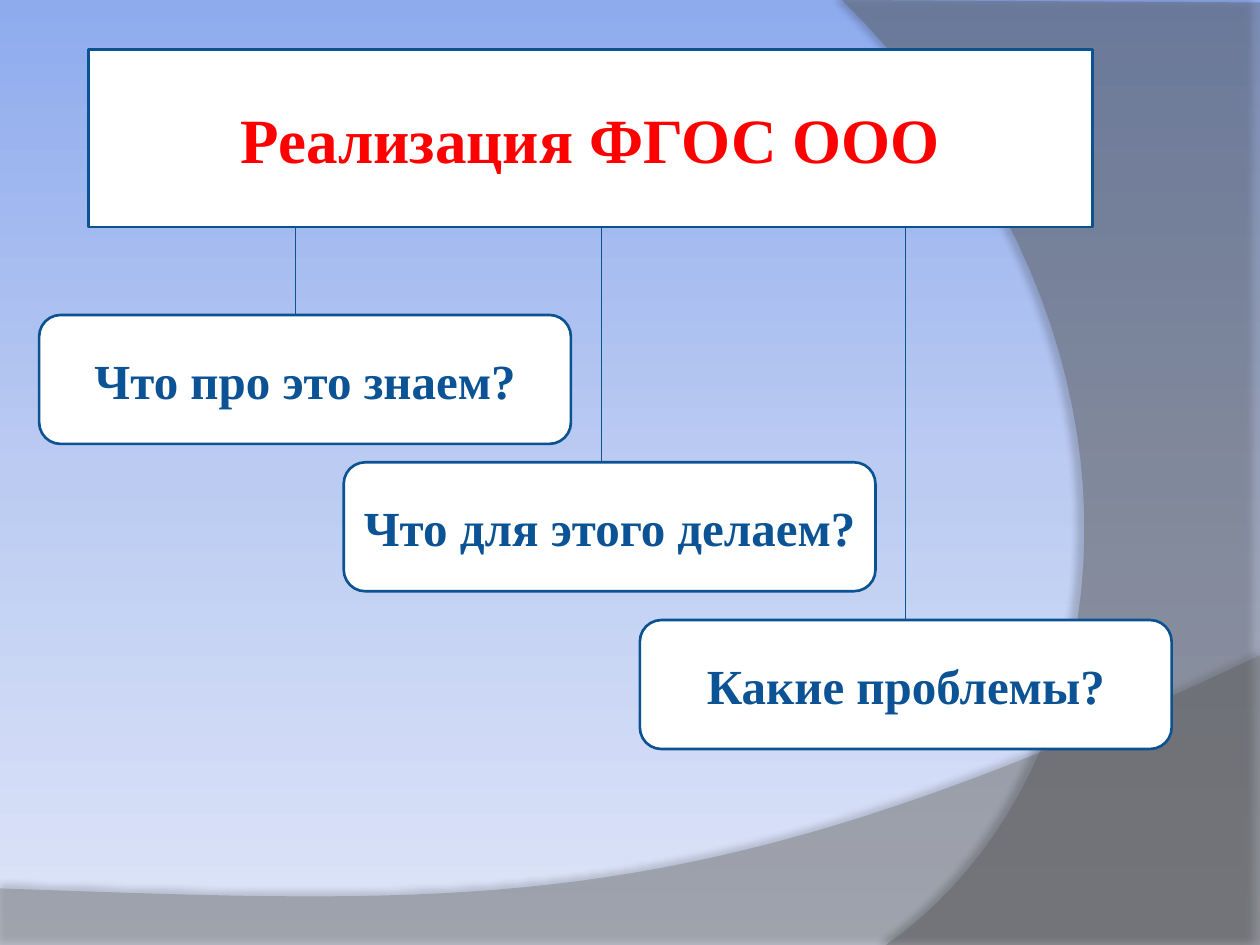
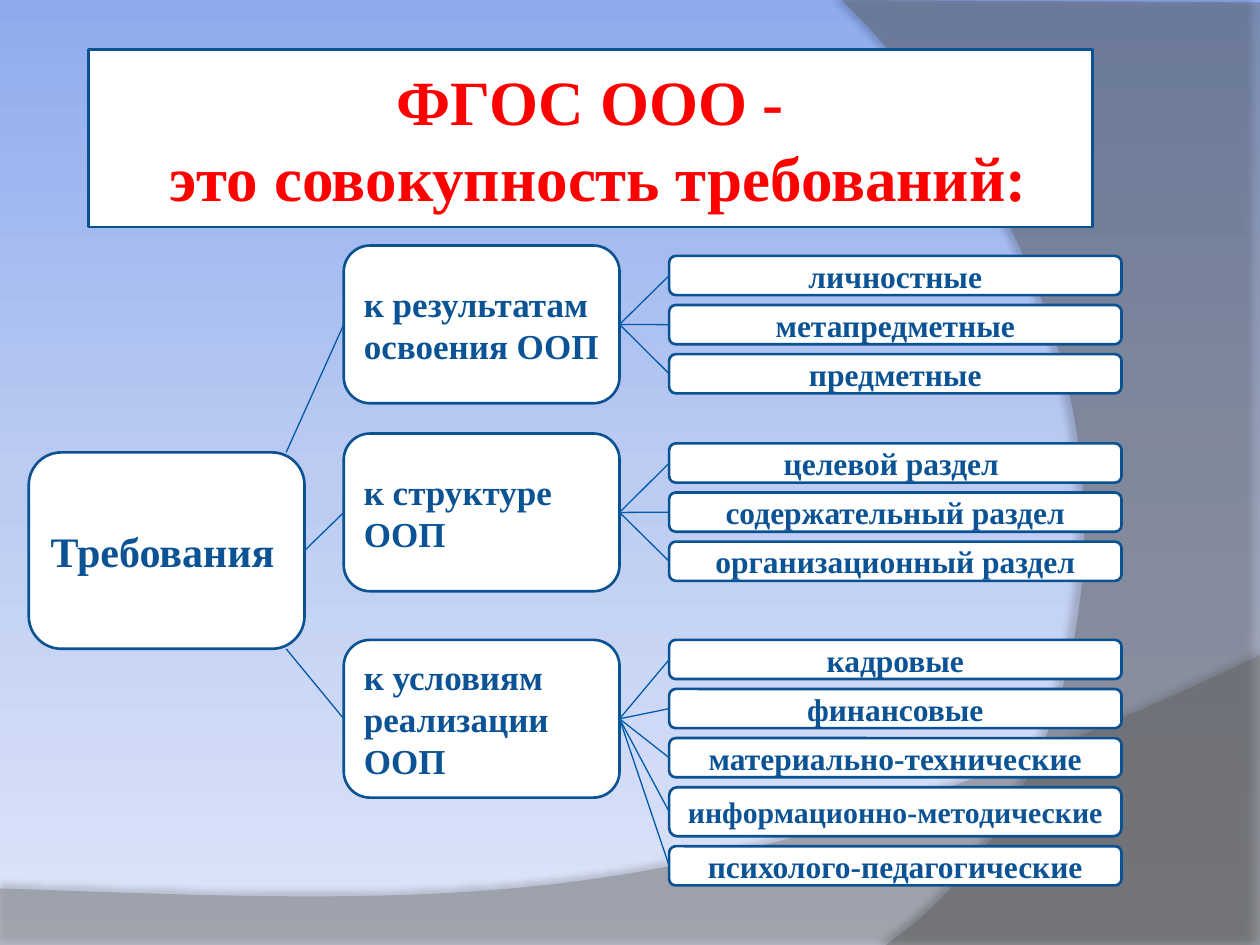
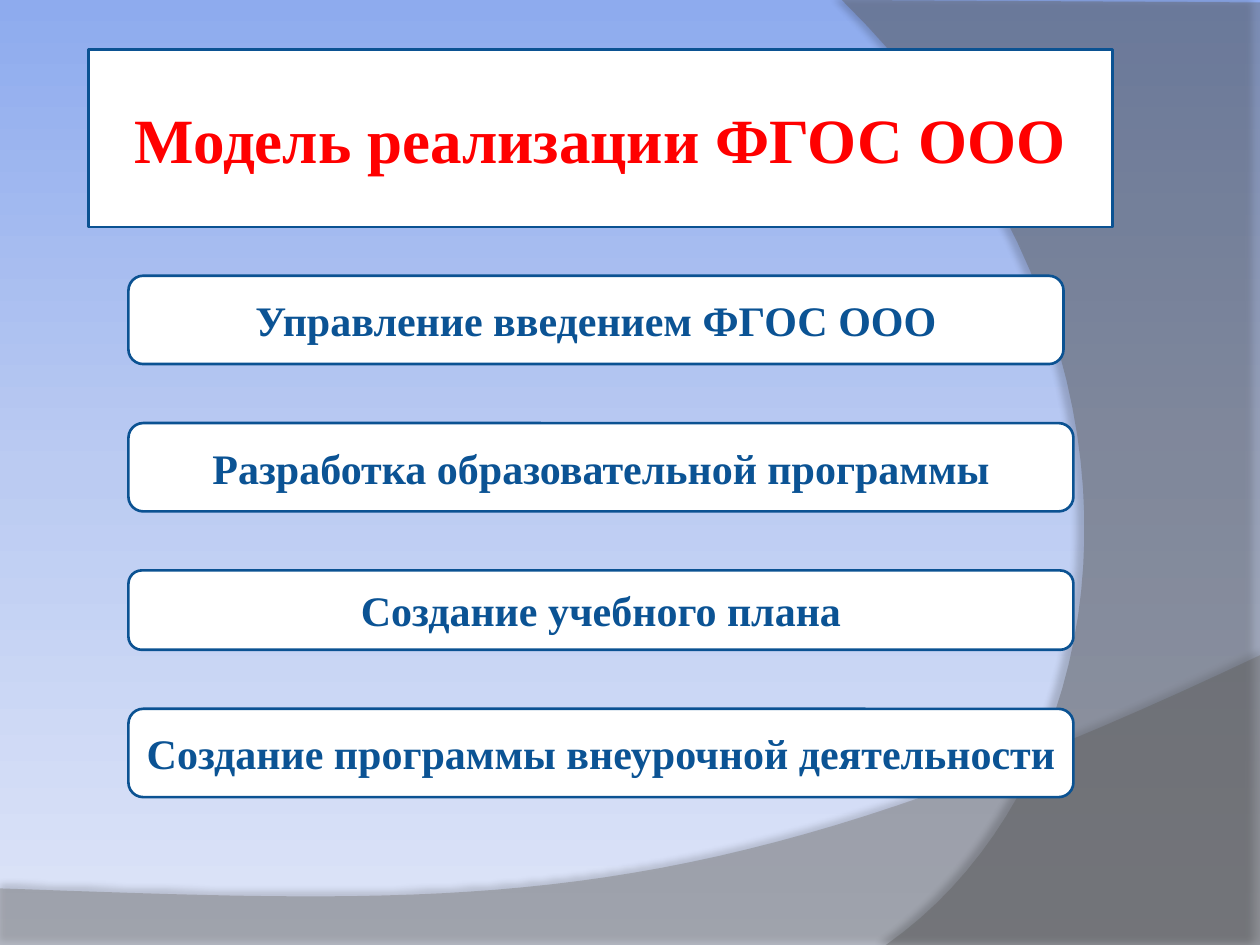
from copy import deepcopy

from lxml.etree import SubElement
from pptx import Presentation
from pptx.dml.color import RGBColor
from pptx.enum.shapes import MSO_CONNECTOR, MSO_SHAPE
from pptx.enum.text import MSO_ANCHOR, MSO_AUTO_SIZE, PP_ALIGN
from pptx.oxml.ns import qn
from pptx.util import Cm, Pt

FONT = "Times New Roman"
WHITE = RGBColor(0xFF, 0xFF, 0xFF)
RED = RGBColor(0xFF, 0x00, 0x00)
TEXT_BLUE = RGBColor(0x0B, 0x53, 0x94)
OUTLINE_BLUE = RGBColor(0x0B, 0x52, 0x92)
LINK_BLUE = RGBColor(0x00, 0x59, 0xAB)
BOTTOM_GREY = RGBColor(0x7F, 0x7F, 0x7F)
RIGHT_GREY = RGBColor(0x5E, 0x5E, 0x5E)
SKY = [
    (0, RGBColor(0x8E, 0xAB, 0xEE)),
    (0.5, RGBColor(0xBB, 0xCB, 0xF2)),
    (1, RGBColor(0xDE, 0xE5, 0xF8)),
]

TITLE_TOP, TITLE_HEIGHT = 1, 3.58
TITLE_BOTTOM = TITLE_TOP + TITLE_HEIGHT
TOP, LEFT, BOTTOM, RIGHT = range(4)


def set_background(master):
    fill = master.background.fill
    fill.gradient()
    fill.gradient_angle = 270
    stops = master.element.find(".//" + qn("a:gsLst"))
    stops.append(deepcopy(stops[0]))
    for stop, (position, color) in zip(fill.gradient_stops, SKY):
        stop.position = position
        stop.color.rgb = color


def curve(p0, p1, p2, p3, steps=40):
    """Points of a cubic Bezier curve, both ends included."""
    points = []
    for i in range(steps + 1):
        t = i / steps
        u = 1 - t
        points.append(tuple(
            u**3 * a + 3 * u * u * t * b + 3 * u * t * t * c + t**3 * d
            for a, b, c, d in zip(p0, p1, p2, p3)))
    return points


def add_band(s, master, points, color, opacity, shadow_opacity, distance, direction):
    """Draw a translucent band with a soft shadow and move it to the master."""
    points = [(Cm(x), Cm(y)) for x, y in points]
    builder = s.shapes.build_freeform(*points[0])
    builder.add_line_segments(points[1:], close=True)
    band = builder.convert_to_shape()
    band.fill.solid()
    band.fill.fore_color.rgb = color
    band.line.fill.background()
    band.shadow.inherit = False

    props = band.element.spPr
    rgb = props.find(qn("a:solidFill")).find(qn("a:srgbClr"))
    SubElement(rgb, qn("a:alpha"), val=str(opacity * 1000))
    shadow = SubElement(
        props.find(qn("a:effectLst")), qn("a:outerShdw"),
        blurRad=str(Pt(4)), dist=str(Pt(distance)), dir=str(direction * 60000),
        algn="ctr", rotWithShape="0")
    shade = SubElement(shadow, qn("a:srgbClr"), val="000000")
    SubElement(shade, qn("a:alpha"), val=str(shadow_opacity * 1000))

    tree = master.element.cSld.spTree
    band.element.nvSpPr.cNvPr.set("id", str(20 + len(tree)))
    first_placeholder = next(iter(master.placeholders)).element
    first_placeholder.addprevious(band.element)


def add_bands(s, master):
    bottom = [(0, 19.08), (25.4, 19.08)] + curve(
        (25.4, 13.21), (14.2, 18.52), (9.93, 18.26), (0, 17.91))
    right = [(25.4, 0.05), (25.4, 19.05)] + curve(
        (17.86, 19.05), (22.63, 15.72), (24.05, 6.99), (16.97, 0))
    add_band(s, master, bottom, BOTTOM_GREY, 45, 35, 3.5, 270)
    add_band(s, master, right, RIGHT_GREY, 40, 45, 4, 180)


def set_text(sp, text, size=18, color=TEXT_BLUE, align=PP_ALIGN.CENTER):
    tf = sp.text_frame
    tf.word_wrap = True
    tf.auto_size = MSO_AUTO_SIZE.NONE
    tf.vertical_anchor = MSO_ANCHOR.MIDDLE
    for i, line in enumerate(text.split("\n")):
        p = tf.add_paragraph() if i else tf.paragraphs[0]
        p.alignment = align
        r = p.add_run()
        r.text = line
        r.font.name = FONT
        r.font.size = Pt(size)
        r.font.bold = True
        r.font.color.rgb = color


def style_box(sp):
    sp.fill.solid()
    sp.fill.fore_color.rgb = WHITE
    sp.line.color.rgb = OUTLINE_BLUE
    sp.line.width = Pt(1.5)


def add_box(s, text, x, y, w, h, **text_format):
    sp = s.shapes.add_shape(
        MSO_SHAPE.FLOWCHART_ALTERNATE_PROCESS, Cm(x), Cm(y), Cm(w), Cm(h))
    sp.shadow.inherit = False
    style_box(sp)
    set_text(sp, text, **text_format)
    return sp


def add_title(s, text, width=20.24):
    """Turn the title placeholder into the rounded heading box."""
    sp = s.shapes.title
    sp.left, sp.top = Cm(1.78), Cm(TITLE_TOP)
    sp.width, sp.height = Cm(width), Cm(TITLE_HEIGHT)
    geometry = SubElement(sp.element.spPr, qn("a:prstGeom"),
                          prst="flowChartAlternateProcess")
    SubElement(geometry, qn("a:avLst"))
    style_box(sp)
    set_text(sp, text, size=36, color=RED)


def add_link(s, start, end, color=LINK_BLUE):
    """Draw a line; each end is an (x, y) point or a (shape, side) pair."""
    line = s.shapes.add_connector(MSO_CONNECTOR.STRAIGHT, 0, 0, 0, 0)
    if isinstance(start[0], (int, float)):
        line.begin_x, line.begin_y = Cm(start[0]), Cm(start[1])
    else:
        line.begin_connect(*start)
    if isinstance(end[0], (int, float)):
        line.end_x, line.end_y = Cm(end[0]), Cm(end[1])
    else:
        line.end_connect(*end)
    line.line.color.rgb = color
    line.line.width = Pt(0.75)
    SubElement(line.element.spPr, qn("a:effectLst"))


def build_questions(s):
    add_title(s, "Реализация ФГОС ООО")
    questions = [
        ("Что про это знаем?", 0.79, 6.35),
        ("Что для этого делаем?", 6.93, 9.32),
        ("Какие проблемы?", 12.9, 12.5),
    ]
    boxes = [add_box(s, text, x, y, 10.72, 2.6, size=28) for text, x, y in questions]
    ends = [(5.95, 6.35), (12.12, 9.32), (boxes[2], TOP)]
    for x, end in zip((5.95, 12.12, 18.26), ends):
        add_link(s, (x, TITLE_BOTTOM), end, TEXT_BLUE)


def build_requirements(s):
    add_title(s, "ФГОС ООО -\n это совокупность требований:")
    root = add_box(s, "Требования", 0.58, 9.12, 5.56, 3.96,
                   size=24, align=PP_ALIGN.LEFT)
    sections = [
        ("к результатам\nосвоения ООП", 4.95, 5.16, (5.77, 9.12),
         ["личностные", "метапредметные", "предметные"]),
        ("к структуре ООП", 8.74, 8.94, (root, RIGHT),
         ["целевой раздел ", "содержательный раздел", "организационный раздел"]),
        ("к условиям реализации ООП", 12.9, 12.9, (5.77, 13.08),
         ["кадровые", "финансовые", "материально-технические",
          "информационно-методические", "психолого-педагогические"]),
    ]
    for name, y, item_y, start, items in sections:
        section = add_box(s, name, 6.93, y, 5.56, 3.18,
                          size=20, align=PP_ALIGN.LEFT)
        add_link(s, start, (section, LEFT))
        for text in items:
            is_long = len(text) > 25
            height = 0.99 if is_long else 0.79
            item = add_box(s, text, 13.49, item_y, 9.12, height,
                           size=17 if is_long else 18)
            add_link(s, (section, RIGHT), (item, LEFT))
            item_y += height + 0.2


def build_model(s):
    add_title(s, "Модель реализации ФГОС ООО", width=20.65)
    steps = [
        ("Управление введением ФГОС ООО", 18.85, 1.78),
        ("Разработка образовательной программы", 19.05, 1.78),
        ("Создание учебного плана", 19.05, 1.6),
        ("Создание программы внеурочной деятельности", 19.05, 1.78),
    ]
    y = 5.56
    for text, width, height in steps:
        add_box(s, text, 2.59, y, width, height, size=24)
        y += height + 1.19


def main():
    prs = Presentation()
    prs.slide_width, prs.slide_height = Cm(25.4), Cm(19.05)
    set_background(prs.slide_master)
    title_only = prs.slide_layouts[5]
    for build in (build_questions, build_requirements, build_model):
        build(prs.slides.add_slide(title_only))
    add_bands(prs.slides[0], prs.slide_master)
    prs.save("out.pptx")


if __name__ == "__main__":
    main()
